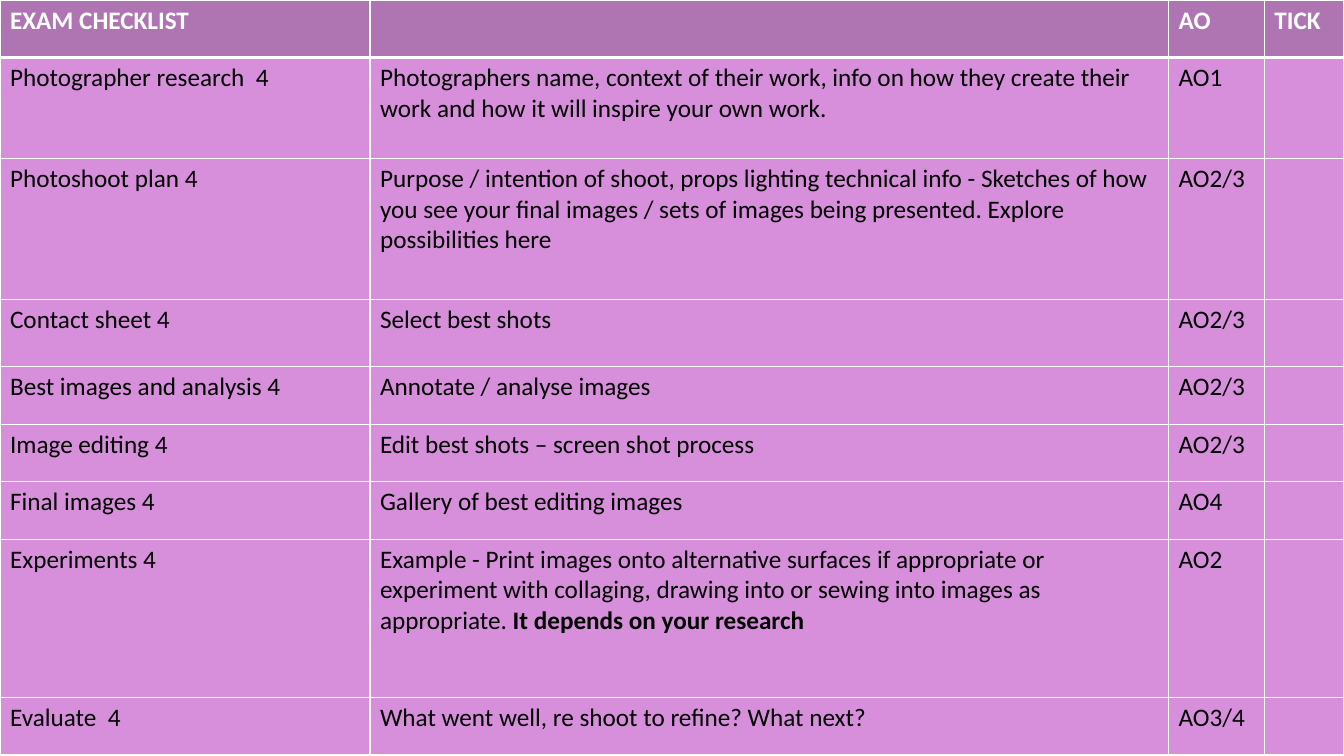
"""Build the exam checklist slide: one full-page table."""
from dataclasses import dataclass

from lxml import etree
from pptx import Presentation
from pptx.dml.color import RGBColor
from pptx.oxml.ns import qn
from pptx.util import Inches, Pt


@dataclass(frozen=True)
class Theme:
    font: str = "Calibri"
    size: int = 18
    header_fill: str = "AF75B2"
    body_fill: str = "D78FDB"
    header_text: str = "FFFFFF"
    body_text: str = "000000"
    border: str = "FFFFFF"
    thin: int = 1
    thick: int = 3


THEME = Theme()
BLANK_LAYOUT = 6
COLUMN_WIDTHS = [3.67, 7.92, 0.95, 0.79]
ROWS = [
    (0.57, "EXAM CHECKLIST", "", "AO", "TICK"),
    (1, "Photographer research  4",
     "Photographers name, context of their work, info on how they create their "
     "work and how it will inspire your own work.", "AO1", ""),
    (1.4, "Photoshoot plan 4",
     "Purpose / intention of shoot, props lighting technical info - Sketches of how "
     "you see your final images / sets of images being presented. Explore "
     "possibilities here", "AO2/3", ""),
    (0.67, "Contact sheet 4", "Select best shots", "AO2/3", ""),
    (0.57, "Best images and analysis 4", "Annotate / analyse images", "AO2/3", ""),
    (0.57, "Image editing 4", "Edit best shots – screen shot process", "AO2/3", ""),
    (0.57, "Final images 4", "Gallery of best editing images", "AO4", ""),
    (1.57, "Experiments 4",
     "Example - Print images onto alternative surfaces if appropriate or "
     "experiment with collaging, drawing into or sewing into images as "
     "appropriate. **It depends on your research", "AO2", ""),
    (0.57, "Evaluate  4", "What went well, re shoot to refine? What next?", "AO3/4", ""),
]


def set_borders(cell, top, bottom):
    """Draw the four cell borders, with top and bottom widths in points."""
    properties = cell._tc.get_or_add_tcPr()
    sides = {"a:lnL": THEME.thin, "a:lnR": THEME.thin, "a:lnT": top, "a:lnB": bottom}
    for position, (side, width) in enumerate(sides.items()):
        line = etree.Element(qn(side), w=str(Pt(width)))
        fill = etree.SubElement(line, qn("a:solidFill"))
        etree.SubElement(fill, qn("a:srgbClr"), val=THEME.border)
        properties.insert(position, line)


def write_text(cell, text, color, bold):
    """Write the cell text; the part after a double asterisk is bold."""
    para = cell.text_frame.paragraphs[0]
    para.font.size = Pt(THEME.size)
    for index, part in enumerate(text.split("**") if text else []):
        span = para.add_run()
        span.text = part
        span.font.name = THEME.font
        span.font.size = Pt(THEME.size)
        span.font.bold = bold or index == 1
        span.font.color.rgb = RGBColor.from_string(color)


deck = Presentation()
deck.slide_width = Inches(13.33)
deck.slide_height = Inches(7.5)
page = deck.slides.add_slide(deck.slide_layouts[BLANK_LAYOUT])

checklist = page.shapes.add_table(
    len(ROWS), len(COLUMN_WIDTHS), 0, 0, deck.slide_width, deck.slide_height
).table
checklist.horz_banding = False

for column, width in zip(checklist.columns, COLUMN_WIDTHS):
    column.width = Inches(width)

for row_index, (height, *texts) in enumerate(ROWS):
    checklist.rows[row_index].height = Inches(height)
    is_header = row_index == 0
    fill_color = THEME.header_fill if is_header else THEME.body_fill
    text_color = THEME.header_text if is_header else THEME.body_text
    top = THEME.thick if row_index == 1 else THEME.thin
    bottom = THEME.thick if is_header else THEME.thin
    for column_index, text in enumerate(texts):
        cell = checklist.cell(row_index, column_index)
        cell.fill.solid()
        cell.fill.fore_color.rgb = RGBColor.from_string(fill_color)
        set_borders(cell, top, bottom)
        write_text(cell, text, text_color, is_header)

deck.save("out.pptx")
